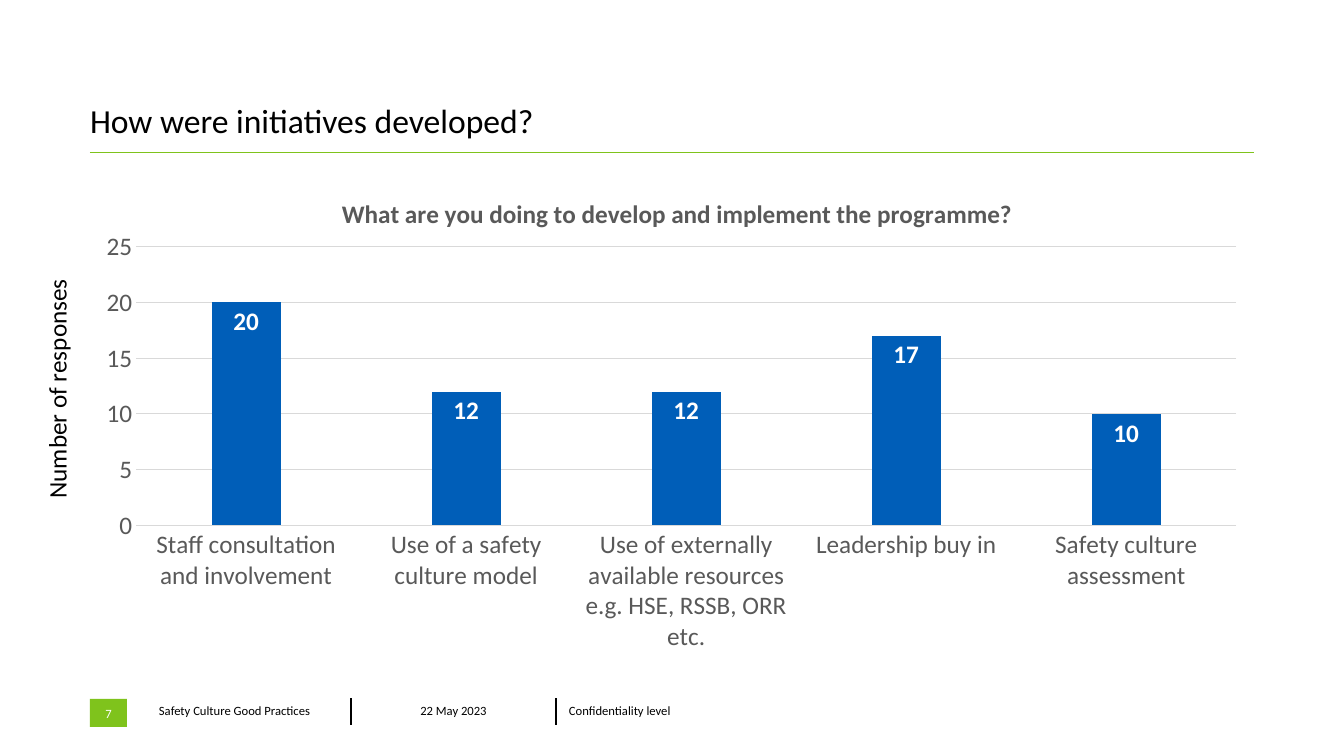
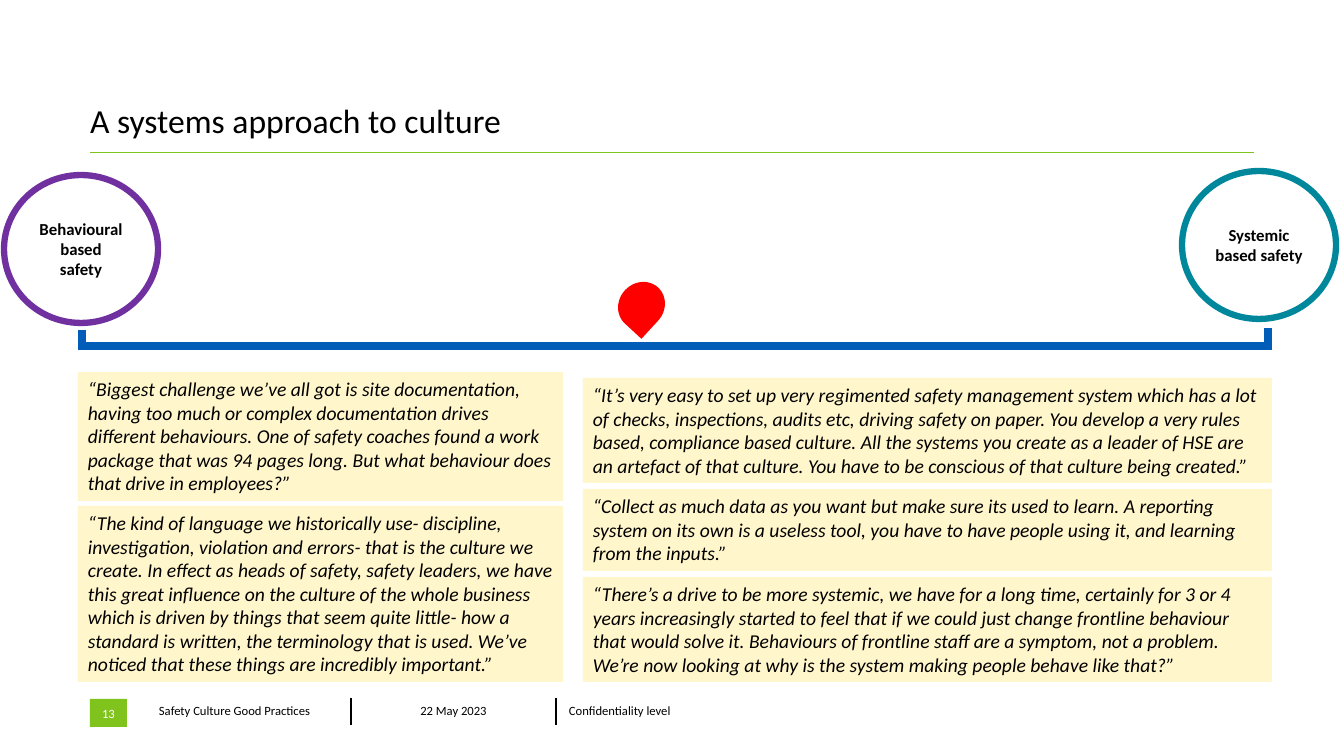
from lxml import etree
from pptx import Presentation
from pptx.chart.data import CategoryChartData
from pptx.dml.color import RGBColor
from pptx.enum.chart import XL_CHART_TYPE as CHART, XL_LABEL_POSITION as LABEL, XL_TICK_MARK as TICK
from pptx.enum.shapes import MSO_CONNECTOR, MSO_SHAPE as SHAPE
from pptx.enum.text import MSO_ANCHOR as ANCHOR, MSO_AUTO_SIZE, PP_ALIGN as ALIGN
from pptx.oxml import parse_xml
from pptx.oxml.ns import nsdecls, qn
from pptx.util import Emu, Pt

FONT = "Calibri"
BLACK, WHITE, GREY, GRID = "000000", "FFFFFF", "595959", "D9D9D9"
GREEN, BLUE, CREAM, RED = "7FC31C", "005EB8", "FFF6CC", "FF0000"
PURPLE, TEAL = "7030A0", "00879B"
FOOTER = ["Safety Culture Good Practices", "22 May 2023", "Confidentiality level"]


def px(n):
    return Emu(round(n * 914400 / 100.8))


def box(*sides):
    return [px(n) for n in sides]


def rgb(color):
    return RGBColor.from_string(color)


def set_font(font, size, color=BLACK, bold=False, italic=False):
    font.name, font.size = FONT, Pt(size)
    font.bold, font.italic = bold, italic
    font.color.rgb = rgb(color)


def write(tf, text, size, align=ALIGN.LEFT, anchor=ANCHOR.TOP, margins=None, **style):
    """Fill a text frame or table cell, one paragraph per line."""
    frame = getattr(tf, "text_frame", tf)
    frame.word_wrap = True
    tf.vertical_anchor = anchor
    if margins:
        tf.margin_left, tf.margin_top, tf.margin_right, tf.margin_bottom = box(*margins)
    frame.text = text
    for p in frame.paragraphs:
        p.alignment = align
        set_font(p.font, size, **style)


def add_shape(slide, kind, place, fill=None, line=None, weight=1):
    sp = slide.shapes.add_shape(kind, *box(*place))
    sp.shadow.inherit = False
    if fill:
        sp.fill.solid()
        sp.fill.fore_color.rgb = rgb(fill)
    else:
        sp.fill.background()
    if line:
        sp.line.color.rgb = rgb(line)
        sp.line.width = Pt(weight)
    else:
        sp.line.fill.background()
    return sp


def add_line(slide, ends, color, weight):
    line = slide.shapes.add_connector(MSO_CONNECTOR.STRAIGHT, *box(*ends))
    line.line.color.rgb = rgb(color)
    line.line.width = Pt(weight)
    etree.SubElement(line._element.spPr, qn("a:effectLst"))


def add_cell_border(cell, side):
    cell._tc.get_or_add_tcPr().insert(0, parse_xml(
        f'<a:ln{side} {nsdecls("a")} w="12700"><a:solidFill>'
        f'<a:srgbClr val="{BLACK}"/></a:solidFill></a:ln{side}>'))


def add_footer(slide, left, top, number):
    badge = add_shape(slide, SHAPE.RECTANGLE, (left, top, 37, 28), GREEN)
    write(badge.text_frame, number, 9, ALIGN.CENTER, ANCHOR.MIDDLE, (4, 4, 4, 4), color=WHITE)
    table = slide.shapes.add_table(1, 3, *box(left + 56, top, 615, 25)).table
    table.first_row = table.horz_banding = False
    for i, text in enumerate(FOOTER):
        cell = table.cell(0, i)
        cell.fill.background()
        align = ALIGN.CENTER if i == 1 else ALIGN.LEFT
        write(cell, text, 9, align, ANCHOR.MIDDLE, (13, 5, 13, 5))
        if i < 2:
            add_cell_border(cell, "R")
        if i > 0:
            add_cell_border(cell, "L")


def add_base(prs, title, number):
    """Add a slide with its title, rule and footer."""
    slide = prs.slides.add_slide(prs.slide_layouts[5])
    ph = slide.shapes.title
    ph.left, ph.top, ph.width, ph.height = box(90, 50, 923, 90)
    write(ph.text_frame, title, 24, anchor=ANCHOR.BOTTOM, margins=(0, 0, 0, 0))
    ph.text_frame.auto_size = MSO_AUTO_SIZE.NONE
    add_line(slide, (90, 152, 1254, 152), GREEN, 0.6)
    add_footer(slide, 90, 699, number)
    return slide


def set_layout(parent, index, **sizes):
    """Place a chart part by fractions of the chart's size."""
    for old in parent.findall(qn("c:layout")):
        parent.remove(old)
    target = '<c:layoutTarget val="inner"/>' if "w" in sizes else ""
    modes = "".join(f'<c:{k}Mode val="edge"/>' for k in "xy")
    values = "".join(f'<c:{k} val="{v}"/>' for k, v in sizes.items())
    parent.insert(index, parse_xml(
        f'<c:layout {nsdecls("c")}><c:manualLayout>{target}{modes}{values}'
        '</c:manualLayout></c:layout>'))


def add_responses_chart(slide, place, title, responses):
    data = CategoryChartData()
    data.categories = list(responses)
    data.add_series("Series 1", list(responses.values()))
    chart = slide.shapes.add_chart(CHART.COLUMN_CLUSTERED, *box(*place), data).chart
    set_font(chart.font, 10)
    chart.has_legend = False
    chart.has_title = True
    chart.chart_title.include_in_layout = False
    tf = chart.chart_title.text_frame
    tf.text = title
    set_font(tf.paragraphs[0].font, 18, GREY, bold=True)
    set_layout(chart.chart_title._element, 1, x=0.22, y=0.05)
    set_layout(chart._chartSpace.chart.plotArea, 0, x=0.05, y=0.16, w=0.93, h=0.56)

    for axis in (chart.category_axis, chart.value_axis):
        axis.major_tick_mark = axis.minor_tick_mark = TICK.NONE
        set_font(axis.tick_labels.font, 18, GREY)
    values = chart.value_axis
    values.minimum_scale, values.maximum_scale, values.major_unit = 0, 25, 5
    values.format.line.fill.background()
    for line in (chart.category_axis.format.line, values.major_gridlines.format.line):
        line.color.rgb = rgb(GRID)
        line.width = Pt(0.75)

    plot = chart.plots[0]
    plot.gap_width, plot.overlap, plot.vary_by_categories = 219, -27, False
    fill = plot.series[0].format.fill
    fill.solid()
    fill.fore_color.rgb = rgb(BLUE)
    plot.has_data_labels = True
    labels = plot.data_labels
    labels.show_value = True
    labels.position = LABEL.INSIDE_END
    set_font(labels.font, 18, WHITE, bold=True)


def add_scale(slide, left, right, y):
    """Draw the scale bar with its two end ticks and the marker."""
    add_line(slide, (left, y, right, y), BLUE, 6)
    add_line(slide, (left + 4, y - 16, left + 4, y + 3), BLUE, 6)
    add_line(slide, (right - 4, y - 18, right - 4, y + 1), BLUE, 6)
    marker = add_shape(slide, SHAPE.TEAR, (617, y - 63, 49, 45), RED)
    marker.rotation = 132.7


def add_pole(slide, left, top, text, color):
    pole = add_shape(slide, SHAPE.FLOWCHART_CONNECTOR, (left, top, 154, 148), line=color, weight=4.5)
    write(pole.text_frame, text, 12, ALIGN.CENTER, ANCHOR.MIDDLE, bold=True)


def add_quotes(slide, left, top, width, gap, quotes):
    """Stack quotes, each given as a height and its text."""
    for height, text in quotes:
        sp = add_shape(slide, SHAPE.RECTANGLE, (left, top, width, height), CREAM)
        write(sp.text_frame, text, 14, italic=True)
        top += height + gap


def build_chart_slide(prs):
    slide = add_base(prs, "How were initiatives developed?", "7")
    add_responses_chart(
        slide, (77, 167, 1183, 498),
        "What are you doing to develop and implement the programme?", {
            "Staff consultation and involvement": 20,
            "Use of a safety culture model": 12,
            "Use of externally available resources e.g. HSE, RSSB, ORR etc.": 12,
            "Leadership buy in": 17,
            "Safety culture assessment": 10,
        })
    label = slide.shapes.add_textbox(*box(-74, 358, 261, 40))
    label.rotation = 270
    write(label.text_frame, "Number of responses", 18)


def build_systems_slide(prs):
    slide = add_base(prs, "A systems approach to culture", "13")
    add_quotes(slide, 78, 372, 485, 5, [
        (129, "“Biggest challenge we’ve all got is site documentation, having too much or "
              "complex documentation drives different behaviours. One of safety coaches found "
              "a work package that was 94 pages long. But what behaviour does that drive in "
              "employees?”"),
        (176, "“The kind of language we historically use- discipline, investigation, violation "
              "and errors- that is the culture we create. In effect as heads of safety, safety "
              "leaders, we have this great influence on the culture of the whole business which "
              "is driven by things that seem quite little- how a standard is written, the "
              "terminology that is used. We’ve noticed that these things are incredibly "
              "important.”"),
    ])
    add_quotes(slide, 583, 378, 689, 6, [
        (105, "“It’s very easy to set up very regimented safety management system which has a "
              "lot of checks, inspections, audits etc, driving safety on paper. You develop a "
              "very rules based, compliance based culture. All the systems you create as a "
              "leader of HSE are an artefact of that culture. You have to be conscious of that "
              "culture being created.”"),
        (82, "“Collect as much data as you want but make sure its used to learn. A reporting "
             "system on its own is a useless tool, you have to have people using it, and "
             "learning from the inputs.”"),
        (105, "“There’s a drive to be more systemic, we have for a long time, certainly for 3 "
              "or 4 years increasingly started to feel that if we could just change frontline "
              "behaviour that would solve it. Behaviours of frontline staff are a symptom, not "
              "a problem. We’re now looking at why is the system making people behave like "
              "that?”"),
    ])
    add_scale(slide, 78, 1272, 346)
    add_pole(slide, 4, 175, "Behavioural based\nsafety", PURPLE)
    add_pole(slide, 1182, 171, "Systemic based safety", TEAL)


def main():
    prs = Presentation()
    prs.slide_width, prs.slide_height = box(1344, 756)
    build_chart_slide(prs)
    build_systems_slide(prs)
    prs.save("out.pptx")


if __name__ == "__main__":
    main()
